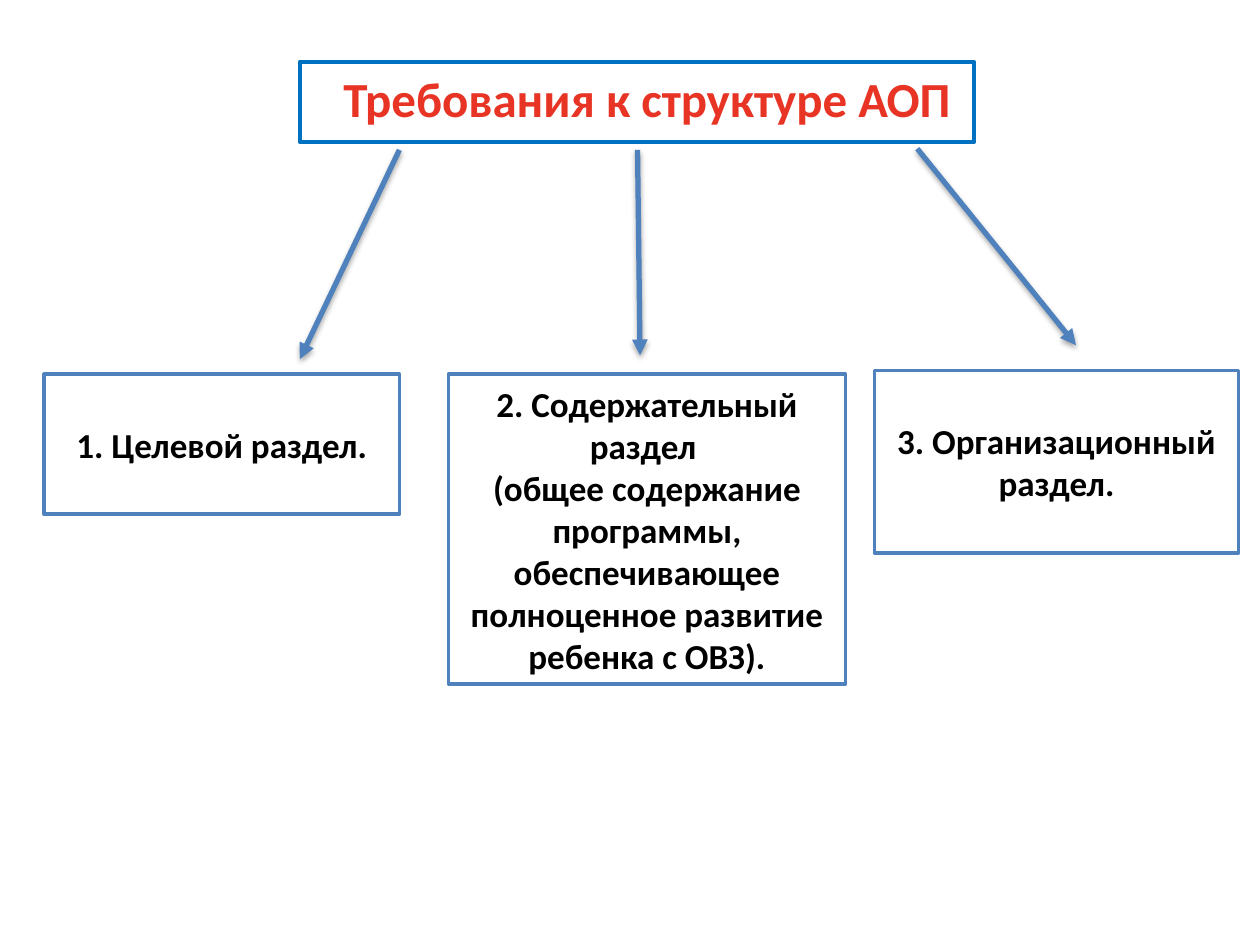
from dataclasses import dataclass

from lxml import etree
from pptx import Presentation
from pptx.dml.color import RGBColor
from pptx.enum.shapes import MSO_CONNECTOR, MSO_SHAPE
from pptx.enum.text import MSO_ANCHOR, PP_ALIGN
from pptx.oxml import parse_xml
from pptx.oxml.ns import nsdecls, qn
from pptx.util import Inches, Pt

RECT = MSO_SHAPE.RECTANGLE
LINE = MSO_CONNECTOR.STRAIGHT
MIDDLE = MSO_ANCHOR.MIDDLE
CENTER = PP_ALIGN.CENTER


@dataclass(frozen=True)
class Theme:
    font: str = "Calibri"
    red: str = "E83425"
    black: str = "000000"
    white: str = "FFFFFF"
    frame: str = "0070C0"
    blue: str = "4F81BD"
    head: int = 28
    body: int = 20


@dataclass(frozen=True)
class Box:
    left: float
    top: float
    width: float
    height: float
    lines: tuple[str, ...] = ()


@dataclass(frozen=True)
class Arrow:
    x1: float
    y1: float
    x2: float
    y2: float


THEME = Theme()
TITLE = Box(0.33, 0.42, 9.61, 0.71, ("Требования к структуре АОП",))
FRAME = Box(2.38, 0.49, 5.35, 0.64)
PARTS = (
    Box(0.35, 2.97, 2.82, 1.11, ("1. Целевой раздел.",)),
    Box(3.56, 2.97, 3.15, 2.46, (
        "2. Содержательный раздел ",
        "(общее содержание программы, обеспечивающее "
        "полноценное развитие ребенка с ОВЗ).",
    )),
    Box(6.94, 2.94, 2.89, 1.45, ("3. Организационный раздел.",)),
)
ARROWS = (
    Arrow(3.17, 1.19, 2.38, 2.85),
    Arrow(5.06, 1.19, 5.08, 2.82),
    Arrow(7.28, 1.18, 8.54, 2.74),
)


def write(shape, lines: tuple[str, ...], *, size: int, color: str) -> None:
    frame = shape.text_frame
    frame.word_wrap = True
    frame.vertical_anchor = MIDDLE
    frame.text = "\n".join(lines)
    for para in frame.paragraphs:
        para.alignment = CENTER
        for run in para.runs:
            run.font.name = THEME.font
            run.font.size = Pt(size)
            run.font.bold = True
            run.font.color.rgb = RGBColor.from_string(color)


def draw_box(slide, box: Box, *, line: str, width: float, fill: str = ""):
    shape = slide.shapes.add_shape(
        RECT, Inches(box.left), Inches(box.top),
        Inches(box.width), Inches(box.height))
    shape.shadow.inherit = False
    if fill:
        shape.fill.solid()
        shape.fill.fore_color.rgb = RGBColor.from_string(fill)
    else:
        shape.fill.background()
    shape.line.color.rgb = RGBColor.from_string(line)
    shape.line.width = Pt(width)
    return shape


def draw_arrow(slide, arrow: Arrow) -> None:
    link = slide.shapes.add_connector(
        LINE, Inches(arrow.x1), Inches(arrow.y1),
        Inches(arrow.x2), Inches(arrow.y2))
    link.line.color.rgb = RGBColor.from_string(THEME.blue)
    link.line.width = Pt(3)
    stroke = link.line._get_or_add_ln()
    etree.SubElement(stroke, qn("a:tailEnd"), type="triangle")
    link._element.spPr.append(parse_xml(
        f'<a:effectLst {nsdecls("a")}>'
        f'<a:outerShdw blurRad="{Pt(3.1)}" dist="{Pt(1.8)}" '
        'dir="5400000" rotWithShape="0">'
        f'<a:srgbClr val="{THEME.black}"><a:alpha val="35000"/></a:srgbClr>'
        '</a:outerShdw></a:effectLst>'))


def main() -> None:
    deck = Presentation()
    deck.slide_width, deck.slide_height = Inches(10), Inches(7.5)
    slide = deck.slides.add_slide(deck.slide_layouts[5])
    draw_box(slide, FRAME, line=THEME.frame, width=2.25)
    title = slide.shapes.title
    title.left, title.top = Inches(TITLE.left), Inches(TITLE.top)
    title.width, title.height = Inches(TITLE.width), Inches(TITLE.height)
    write(title, TITLE.lines, size=THEME.head, color=THEME.red)
    for part in PARTS:
        shape = draw_box(slide, part, line=THEME.blue, width=2,
                         fill=THEME.white)
        write(shape, part.lines, size=THEME.body, color=THEME.black)
    for arrow in ARROWS:
        draw_arrow(slide, arrow)
    deck.save("out.pptx")


if __name__ == "__main__":
    main()
